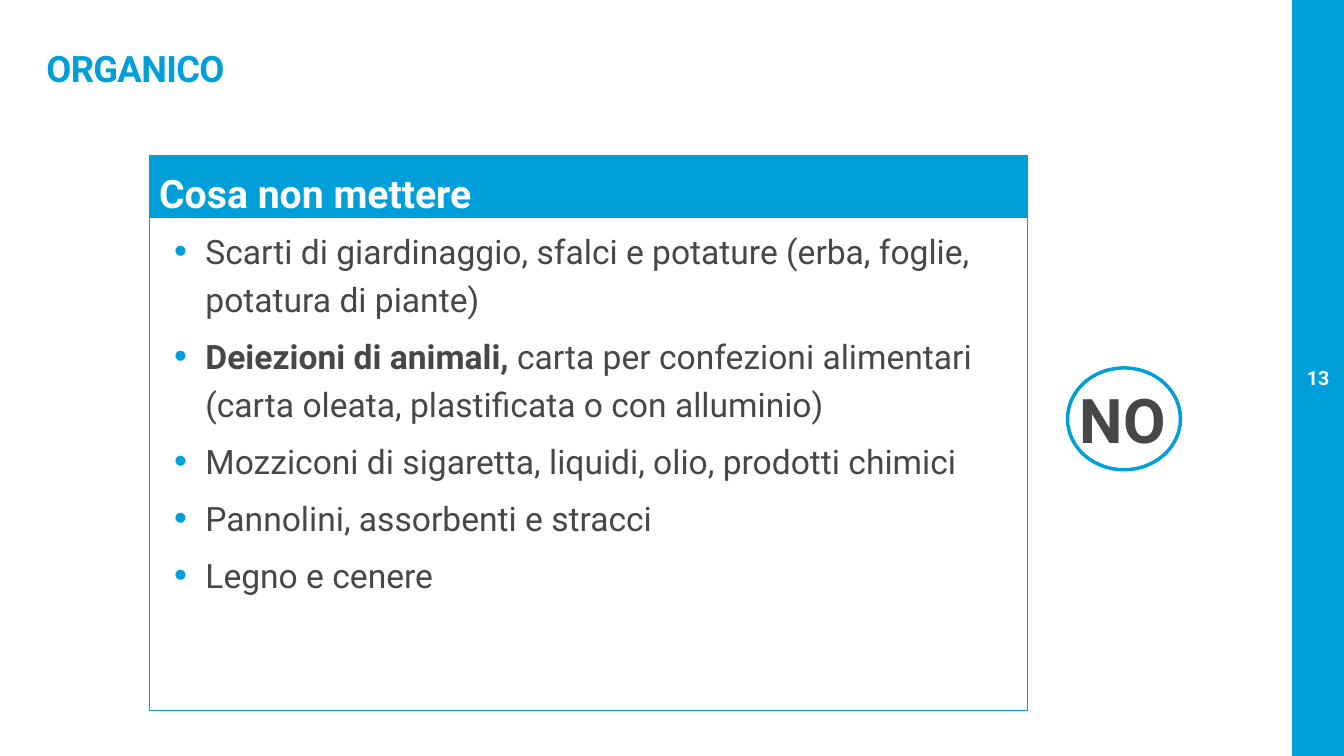
import pptx
import pptx.dml.color
import pptx.enum.shapes
import pptx.enum.text
import pptx.util
from lxml import etree
from pptx.oxml.ns import qn

RGB = pptx.dml.color.RGBColor
BLUE = RGB(0x00, 0x9F, 0xDA)
GREY = RGB(0x47, 0x47, 0x46)
WHITE = RGB(0xFF, 0xFF, 0xFF)

SHAPE = pptx.enum.shapes.MSO_SHAPE
ALIGN = pptx.enum.text.PP_ALIGN
ANCHOR = pptx.enum.text.MSO_ANCHOR
Inches, Pt = pptx.util.Inches, pptx.util.Pt
WIDTH, HEIGHT = Inches(13.333), Inches(7.5)

# Shared edges, in percent of the slide's width or height
BAND_X, PANEL_X, NO_X = 96.15, 11.1, 79.43
BAND_W, PANEL_W = 100 - BAND_X, 65.33
HEAD_Y, HEAD_H, LIST_H = 20.53, 8.27, 65.2

# Each bullet is a list of (text, bold) runs
BULLETS = [
    [("Scarti di giardinaggio, sfalci e potature (erba, foglie, potatura di piante)", False)],
    [("Deiezioni di animali,", True),
     (" carta per confezioni alimentari (carta oleata, plastificata o con alluminio)", False)],
    [("Mozziconi di sigaretta, liquidi, olio, prodotti chimici", False)],
    [("Pannolini, assorbenti e stracci", False)],
    [("Legno e cenere", False)],
]


def place(x, y, w, h):
    """Turn percentages of the slide into lengths."""
    return (int(WIDTH * x / 100), int(HEIGHT * y / 100),
            int(WIDTH * w / 100), int(HEIGHT * h / 100))


def add_box(slide, area, kind=SHAPE.RECTANGLE, fill=None, line=None, weight=0.75):
    sp = slide.shapes.add_shape(kind, *place(*area))
    sp.shadow.inherit = False
    if fill is None:
        sp.fill.background()
    else:
        sp.fill.solid()
        sp.fill.fore_color.rgb = fill
    if line is None:
        sp.line.fill.background()
    else:
        sp.line.color.rgb = line
        sp.line.width = Pt(weight)
    return sp


def add_bullet(p):
    pPr = p._p.get_or_add_pPr()
    pPr.set("marL", str(Inches(0.46)))
    pPr.set("indent", str(Inches(-0.31)))
    color = etree.SubElement(pPr, qn("a:buClr"))
    etree.SubElement(color, qn("a:srgbClr"), val=str(BLUE))
    etree.SubElement(pPr, qn("a:buSzPct"), val="110000")
    etree.SubElement(pPr, qn("a:buFont"), typeface="Arial")
    etree.SubElement(pPr, qn("a:buChar"), char="•")


def write(sp, paragraphs, size, color, insets=(0.1, 0.05, 0.1, 0.05), anchor=ANCHOR.TOP,
          align=ALIGN.LEFT, wrap=True, spacing=None, after=None, bullets=False, tracking=None):
    tf = sp.text_frame
    tf.word_wrap = wrap
    tf.vertical_anchor = anchor
    tf.margin_left, tf.margin_top, tf.margin_right, tf.margin_bottom = map(Inches, insets)
    for i, runs in enumerate(paragraphs):
        p = tf.add_paragraph() if i else tf.paragraphs[0]
        p.alignment = align
        if spacing:
            p.line_spacing = spacing
        if after:
            p.space_after = Pt(after)
        if bullets:
            add_bullet(p)
        for text, bold in runs:
            r = p.add_run()
            r.text = text
            r.font.name = "Roboto"
            r.font.size = Pt(size)
            r.font.bold = bold
            r.font.color.rgb = color
            if tracking:
                r.font._element.set("spc", str(int(tracking * 100)))


def add_label(slide, area, text, size, color, **layout):
    sp = slide.shapes.add_textbox(*place(*area))
    write(sp, [[(text, True)]], size, color, **layout)


def main():
    prs = pptx.Presentation()
    prs.slide_width, prs.slide_height = WIDTH, HEIGHT
    slide = prs.slides.add_slide(prs.slide_layouts[6])

    # Side band, title and page number
    add_box(slide, (BAND_X, 0, BAND_W, 100), fill=BLUE)
    add_label(slide, (3.45, 6, 90.98, 6.67), "ORGANICO", 26, BLUE,
              insets=(0, 0.05, 0.1, 0.05), anchor=ANCHOR.BOTTOM, spacing=0.9, tracking=-0.5)
    add_label(slide, (BAND_X, 47.33, BAND_W, 5.33), "13", 14, WHITE,
              insets=(0, 0, 0, 0), anchor=ANCHOR.MIDDLE, align=ALIGN.CENTER, wrap=False)

    # Panel: heading above the list
    head = add_box(slide, (PANEL_X, HEAD_Y, PANEL_W, HEAD_H), fill=BLUE, line=BLUE)
    write(head, [[("Cosa non mettere", True)]], 28, WHITE, spacing=1.2, after=6)
    body = add_box(slide, (PANEL_X, HEAD_Y + HEAD_H, PANEL_W, LIST_H), line=BLUE)
    write(body, BULLETS, 24, GREY, spacing=1.2, after=6, bullets=True)

    # Circled NO
    no = add_box(slide, (NO_X, 50, 13.65, 12), fill=WHITE)
    write(no, [[("NO", True)]], 44, GREY, insets=(0.12,) * 4, spacing=0.9)
    add_box(slide, (NO_X, 48.67, 8.4, 13.47), SHAPE.OVAL, line=BLUE, weight=2.5)

    prs.save("out.pptx")


if __name__ == "__main__":
    main()
